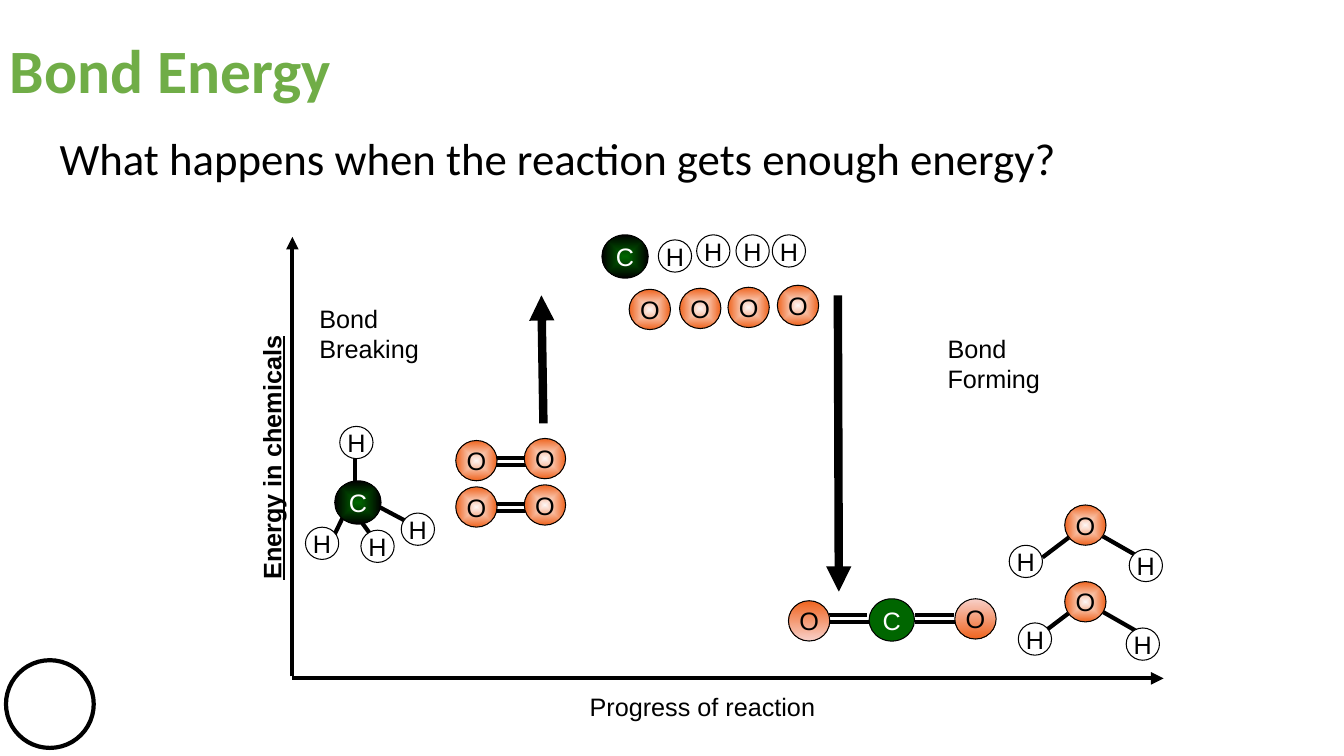
import pptx
import pptx.util
import pptx.dml.color
import pptx.enum.shapes
import pptx.enum.text
import pptx.oxml
import pptx.oxml.ns
import lxml.etree

SCALE = 9144
BLACK, WHITE, GREEN, LEAF = "000000", "FFFFFF", "006600", "70AD47"
ALIGN = pptx.enum.text.PP_ALIGN
ANCHOR = pptx.enum.text.MSO_ANCHOR
RADIAL = (
    '<a:path %s path="shape">'
    '<a:fillToRect l="50000" t="50000" r="50000" b="50000"/></a:path>'
    % pptx.oxml.ns.nsdecls("a")
)

# kind: width, height, fill, letter colour
ATOMS = {
    "H": (33, 32, WHITE, BLACK),
    "O": (41, 40, ("FDF5F3", "EF641F"), BLACK),
    "C": (46, 43, (GREEN, BLACK), WHITE),
    "C flat": (45, 42, GREEN, WHITE),
    "O left": (41, 40, ("EF641F", "F8D0C9", 270), BLACK),
    "O right": (41, 40, ("F8D0C9", "EF641F", 270), BLACK),
}


def px(n):
    return pptx.util.Emu(n * SCALE)


def tint(code):
    return pptx.dml.color.RGBColor.from_string(code)


def write(frame, text, font="Arial", size=18, color=BLACK, bold=False,
          under=False, align=ALIGN.LEFT, anchor=ANCHOR.TOP, wrap=False,
          space=None):
    frame.text = text
    frame.word_wrap = wrap
    frame.auto_size = pptx.enum.text.MSO_AUTO_SIZE.NONE
    frame.vertical_anchor = anchor
    for para in frame.paragraphs:
        para.alignment = align
        para.line_spacing = space
        for run in para.runs:
            run.font.name = font
            run.font.size = pptx.util.Pt(size)
            run.font.color.rgb = tint(color)
            run.font.bold = bold
            run.font.underline = under


class Sketch:
    def __init__(self, deck):
        self.slide = deck.slides.add_slide(deck.slide_layouts[5])
        self.shapes = self.slide.shapes

    def title(self, x, y, w, h, text, **form):
        box = self.shapes.title
        box.left, box.top, box.width, box.height = map(px, (x, y, w, h))
        write(box.text_frame, text, **form)

    def label(self, x, y, w, h, text, turn=0, **form):
        box = self.shapes.add_textbox(*map(px, (x, y, w, h)))
        box.rotation = turn
        write(box.text_frame, text, **form)

    def disc(self, x, y, w, h, fill, weight):
        disc = self.shapes.add_shape(
            pptx.enum.shapes.MSO_SHAPE.OVAL, *map(px, (x, y, w, h)))
        disc.shadow.inherit = False
        disc.line.color.rgb = tint(BLACK)
        disc.line.width = pptx.util.Pt(weight)
        if isinstance(fill, str):
            disc.fill.solid()
            disc.fill.fore_color.rgb = tint(fill)
        else:
            self.blend(disc, *fill)
        return disc

    def blend(self, disc, start, end, angle=None):
        disc.fill.gradient()
        for stop, code in zip(disc.fill.gradient_stops, (start, end)):
            stop.color.rgb = tint(code)
        if angle is not None:
            disc.fill.gradient_angle = angle
            return
        grad = disc.element.spPr.find(pptx.oxml.ns.qn("a:gradFill"))
        lin = grad.find(pptx.oxml.ns.qn("a:lin"))
        grad.replace(lin, pptx.oxml.parse_xml(RADIAL))

    def atom(self, kind, x, y):
        w, h, fill, color = ATOMS[kind]
        frame = self.disc(x, y, w, h, fill, 0.75).text_frame
        frame.margin_left = frame.margin_right = 0
        frame.margin_top = frame.margin_bottom = 0
        write(frame, kind[0], color=color, align=ALIGN.CENTER,
              anchor=ANCHOR.MIDDLE)

    def line(self, x1, y1, x2, y2, weight=3, arrow=False):
        line = self.shapes.add_connector(
            pptx.enum.shapes.MSO_CONNECTOR.STRAIGHT,
            *map(px, (x1, y1, x2, y2)))
        line.line.color.rgb = tint(BLACK)
        line.line.width = pptx.util.Pt(weight)
        props = line.element.spPr
        if arrow:
            lxml.etree.SubElement(
                props.get_or_add_ln(), pptx.oxml.ns.qn("a:tailEnd"),
                type="triangle")
        lxml.etree.SubElement(props, pptx.oxml.ns.qn("a:effectLst"))

    def double(self, x, y):
        self.line(x, y, x + 38, y)
        self.line(x, y + 7, x + 40, y + 7)


def main():
    deck = pptx.Presentation()
    deck.slide_width, deck.slide_height = px(1333), px(750)
    art = Sketch(deck)

    art.disc(6, 655, 87, 87, WHITE, 3)
    art.title(49, 92, 1322, 135,
              "What happens when the reaction gets enough energy?",
              font="Calibri", size=32, anchor=ANCHOR.MIDDLE, wrap=True,
              space=0.9)
    art.label(0, 0, 349, 145, "Bond Energy", font="Calibri", size=44,
              color=LEAF, bold=True, anchor=ANCHOR.MIDDLE, wrap=True,
              space=0.9)

    art.line(831, 293, 832, 587, 6, True)
    art.line(539, 420, 537, 293, 6, True)
    art.line(290, 671, 290, 235, 3, True)
    art.line(290, 673, 1154, 673, 3, True)

    art.label(930, 326, 113, 71, "Bond\nForming")
    art.label(307, 296, 120, 71, "Bond\nBreaking")
    art.label(575, 681, 246, 40, "Progress of reaction")
    art.label(137, 434, 264, 40, "Energy in chemicals", turn=270, bold=True,
              under=True, align=ALIGN.CENTER, anchor=ANCHOR.MIDDLE)

    for x, y in ((490, 454), (490, 500), (908, 610), (822, 610)):
        art.double(x, y)
    for ends in ((352, 481, 352, 448), (343, 507, 331, 532),
                 (352, 509, 374, 539), (363, 496, 414, 523)):
        art.line(*ends)
    for y in (606, 531):
        art.line(1034, y + 22, 1063, y)
        art.line(1092, y, 1127, y + 20)

    places = {
        "H": ((337, 423), (398, 509), (358, 526), (303, 523),
              (653, 238), (691, 233), (730, 233), (766, 233),
              (1001, 541), (1120, 545), (1010, 618), (1117, 623)),
        "O": ((520, 435), (452, 437), (520, 481), (452, 483),
              (624, 287), (674, 286), (722, 285), (771, 283),
              (1056, 577), (1056, 501)),
        "C": ((332, 477), (597, 233)),
        "C flat": ((862, 594),),
        "O left": ((782, 596),),
        "O right": ((947, 594),),
    }
    for kind, spots in places.items():
        for x, y in spots:
            art.atom(kind, x, y)

    deck.save("out.pptx")


if __name__ == "__main__":
    main()
